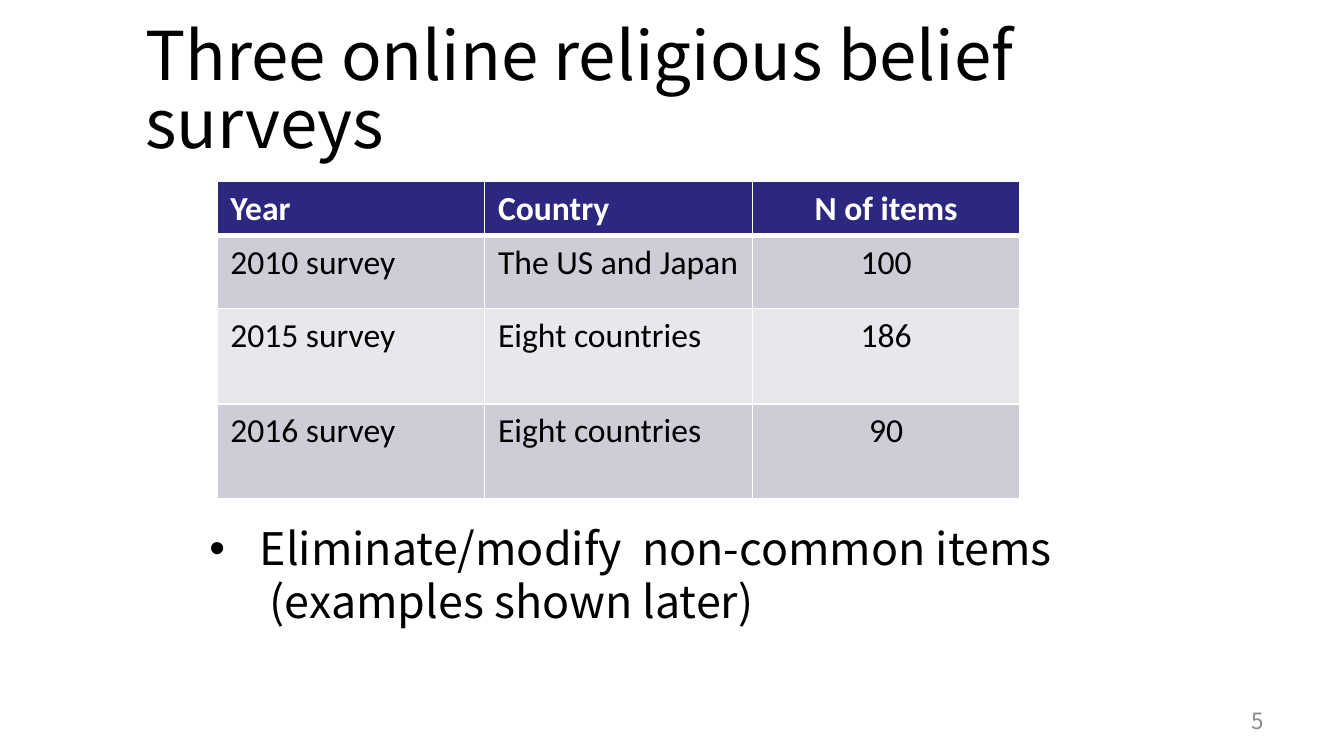
from typing import NamedTuple

from lxml import etree
from pptx import Presentation
from pptx import util as u
from pptx.dml.color import RGBColor
from pptx.enum import text
from pptx.oxml import ns

BODY_FONT = "Noto Sans CJK JP"
TABLE_FONT = "Calibri"
NAVY, GREY, PALE_GREY = "2D287F", "CDCDD8", "E8E8EC"
BLACK, WHITE, NUMBER_GREY = "000000", "FFFFFF", "898989"
LEFT, CENTER, RIGHT = (
    text.PP_ALIGN.LEFT, text.PP_ALIGN.CENTER, text.PP_ALIGN.RIGHT)


class Box(NamedTuple):
    left: float
    top: float
    width: float
    height: float


class Survey(NamedTuple):
    year: str
    country: str
    items: str
    height: float


SURVEYS = [
    Survey("Year", "Country", "N of items", 1.0),
    Survey("2010 survey", "The US and Japan", "100", 1.38),
    Survey("2015 survey", "Eight countries", "186", 1.8),
    Survey("2016 survey", "Eight countries", "90", 1.8),
]


def rgb(color: str) -> RGBColor:
    return RGBColor.from_string(color)


def place(shape, box: Box) -> None:
    shape.left, shape.top, shape.width, shape.height = map(u.Cm, box)


def write(paragraph, words: str, size: float, color: str = BLACK,
          font: str = BODY_FONT, bold: bool = False, align=LEFT) -> None:
    paragraph.alignment = align
    run = paragraph.add_run()
    run.text = words
    run.font.name = font
    run.font.size = u.Pt(size)
    run.font.bold = bold
    run.font.color.rgb = rgb(color)


def indent(paragraph, margin: float, first_line: float = 0,
           bullet: str = "") -> None:
    properties = paragraph._p.get_or_add_pPr()
    properties.set("marL", str(u.Cm(margin)))
    properties.set("indent", str(u.Cm(first_line)))
    if bullet:
        font = etree.SubElement(properties, ns.qn("a:buFont"))
        font.set("typeface", "Arial")
        mark = etree.SubElement(properties, ns.qn("a:buChar"))
        mark.set("char", bullet)


def add_borders(cell, bottom: float) -> None:
    """Draw white cell edges; they must precede the fill in the XML."""
    properties = cell._tc.get_or_add_tcPr()
    for side, width in (("L", 1), ("R", 1), ("T", 1), ("B", bottom)):
        line = etree.SubElement(properties, ns.qn(f"a:ln{side}"))
        line.set("w", str(u.Pt(width)))
        fill = etree.SubElement(line, ns.qn("a:solidFill"))
        etree.SubElement(fill, ns.qn("a:srgbClr")).set("val", WHITE)


def add_title(slide) -> None:
    title = slide.shapes.title
    place(title, Box(2.49, 0.58, 21.64, 2.39))
    frame = title.text_frame
    frame.auto_size = text.MSO_AUTO_SIZE.NONE
    frame.vertical_anchor = text.MSO_ANCHOR.MIDDLE
    frame.paragraphs[0].line_spacing = 0.84
    write(frame.paragraphs[0], "Three online religious belief surveys", 36)


def add_survey_table(slide, box: Box) -> None:
    table = slide.shapes.add_table(
        len(SURVEYS), 3, *map(u.Cm, box)).table
    for column in table.columns:
        column.width = u.Cm(box.width / 3)
    for row, survey in enumerate(SURVEYS):
        table.rows[row].height = u.Cm(survey.height)
        header = row == 0
        fill = NAVY if header else GREY if row % 2 else PALE_GREY
        for column, words in enumerate(survey[:3]):
            cell = table.cell(row, column)
            add_borders(cell, 3 if header else 1)
            cell.fill.solid()
            cell.fill.fore_color.rgb = rgb(fill)
            write(cell.text_frame.paragraphs[0], words, 18,
                  WHITE if header else BLACK, TABLE_FONT, header,
                  CENTER if column == 2 else LEFT)


def add_text_frame(slide, box: Box):
    frame = slide.shapes.add_textbox(*map(u.Cm, box)).text_frame
    frame.word_wrap = True
    return frame


def add_note(slide) -> None:
    frame = add_text_frame(slide, Box(3.71, 9.9, 20.22, 2.62))
    point = frame.paragraphs[0]
    indent(point, 0.95, -0.95, "•")
    detail = frame.add_paragraph()
    indent(detail, 1.14)
    detail.space_before = u.Pt(4.8)
    for paragraph, words in (
            (point, "Eliminate/modify  non-common items"),
            (detail, "(examples shown later)")):
        paragraph.line_spacing = 0.82
        write(paragraph, words, 24)


def add_slide_number(slide) -> None:
    frame = add_text_frame(slide, Box(18.21, 13.23, 5.92, 0.76))
    frame.vertical_anchor = text.MSO_ANCHOR.MIDDLE
    write(frame.paragraphs[0], "5", 12, NUMBER_GREY, align=RIGHT)


def main() -> None:
    presentation = Presentation()
    presentation.slide_width = u.Cm(25.4)
    presentation.slide_height = u.Cm(14.28)
    slide = presentation.slides.add_slide(presentation.slide_layouts[5])
    add_title(slide)
    add_note(slide)
    add_slide_number(slide)
    add_survey_table(slide, Box(4.1, 3.43, 15.18, 5.98))
    presentation.save("out.pptx")


if __name__ == "__main__":
    main()
